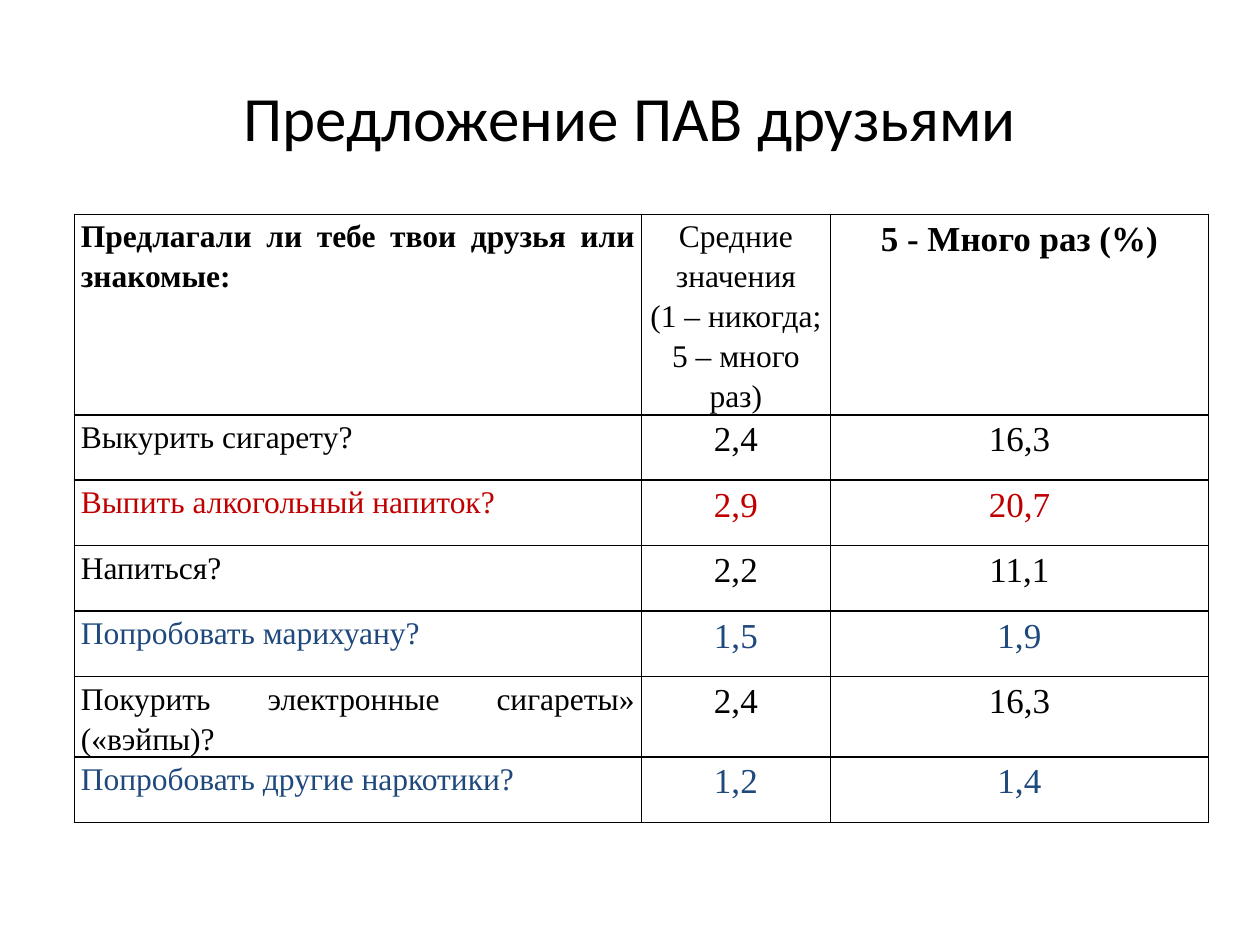
from lxml import etree
from pptx import Presentation
from pptx.dml.color import RGBColor
from pptx.enum.text import MSO_ANCHOR, PP_ALIGN
from pptx.oxml.ns import qn
from pptx.util import Cm, Pt

CENTER, JUSTIFY = PP_ALIGN.CENTER, PP_ALIGN.JUSTIFY
TOP, MIDDLE = MSO_ANCHOR.TOP, MSO_ANCHOR.MIDDLE

BLACK = RGBColor(0x00, 0x00, 0x00)
RED = RGBColor(0xC0, 0x00, 0x00)
BLUE = RGBColor(0x1F, 0x49, 0x7D)

TITLE_FONT, TABLE_FONT = "Calibri", "Times New Roman"
LABEL_SIZE, VALUE_SIZE = 18, 20

COLUMN_WIDTHS = (11.43, 3.81, 7.62)
HEADER_HEIGHT, ROW_HEIGHT = 3.66, 1.32

# Question, mean value, share of "many times", colour
ANSWERS = (
    ("Выкурить сигарету?", "2,4", "16,3", BLACK),
    ("Выпить алкогольный напиток?", "2,9", "20,7", RED),
    ("Напиться?", "2,2", "11,1", BLACK),
    ("Попробовать марихуану?", "1,5", "1,9", BLUE),
    ("Покурить электронные сигареты» («вэйпы)?", "2,4", "16,3", BLACK),
    ("Попробовать другие наркотики?", "1,2", "1,4", BLUE),
)


class SlideBuilder:
    """Holds the style and the current slide."""

    def __init__(self, slide):
        self.slide = slide
        self.line_spacing = 1.15
        self.side_margin = Cm(0.13)
        self.border_width = Pt(1)
        self.border_color = BLACK

    def add_run(self, paragraph, text, font, size, color, bold=False):
        run = paragraph.add_run()
        run.text = text
        run.font.name = font
        run.font.size = Pt(size)
        run.font.bold = bold
        run.font.color.rgb = color

    def title(self, text, left, top, width, height):
        shape = self.slide.shapes.title
        shape.left, shape.top = Cm(left), Cm(top)
        shape.width, shape.height = Cm(width), Cm(height)
        shape.text_frame.vertical_anchor = MIDDLE
        paragraph = shape.text_frame.paragraphs[0]
        paragraph.alignment = CENTER
        self.add_run(paragraph, text, TITLE_FONT, 36, BLACK)

    def table(self, left, top, column_widths, row_heights):
        frame = self.slide.shapes.add_table(
            len(row_heights), len(column_widths), Cm(left), Cm(top),
            Cm(sum(column_widths)), Cm(sum(row_heights)))
        table = frame.table
        table.first_row = table.horz_banding = False
        for column, width in zip(table.columns, column_widths):
            column.width = Cm(width)
        for row, height in zip(table.rows, row_heights):
            row.height = Cm(height)
        return table

    def border(self, cell):
        properties = cell._tc.get_or_add_tcPr()
        for side in ("a:lnL", "a:lnR", "a:lnT", "a:lnB"):
            line = etree.SubElement(properties, qn(side), w=str(self.border_width))
            fill = etree.SubElement(line, qn("a:solidFill"))
            etree.SubElement(fill, qn("a:srgbClr"), val=str(self.border_color))

    def cell(self, cell, lines, alignment, size, color=BLACK, bold=False):
        self.border(cell)
        cell.fill.background()
        cell.margin_left = cell.margin_right = self.side_margin
        cell.margin_top = cell.margin_bottom = 0
        cell.vertical_anchor = TOP
        text_frame = cell.text_frame
        for index, text in enumerate(lines):
            paragraph = text_frame.add_paragraph() if index else text_frame.paragraphs[0]
            paragraph.alignment = alignment
            paragraph.line_spacing = self.line_spacing
            self.add_run(paragraph, text, TABLE_FONT, size, color, bold)


def main():
    presentation = Presentation()
    presentation.slide_width, presentation.slide_height = Cm(25.4), Cm(19.05)
    title_only = presentation.slide_layouts[5]
    builder = SlideBuilder(presentation.slides.add_slide(title_only))

    # Title
    builder.title("Предложение ПАВ друзьями", 1.27, 0.76, 22.86, 3.18)

    # Table header
    row_heights = [HEADER_HEIGHT] + [ROW_HEIGHT] * len(ANSWERS)
    table = builder.table(1.5, 4.32, COLUMN_WIDTHS, row_heights)
    builder.cell(table.cell(0, 0), ["Предлагали ли тебе твои друзья или знакомые:"],
                 JUSTIFY, LABEL_SIZE, bold=True)
    builder.cell(table.cell(0, 1), ["Средние значения", "(1 – никогда; 5 – много раз)"],
                 CENTER, LABEL_SIZE)
    builder.cell(table.cell(0, 2), ["5 - Много раз (%)"], CENTER, VALUE_SIZE, bold=True)

    # Answers
    for row, (question, mean, share, color) in enumerate(ANSWERS, start=1):
        builder.cell(table.cell(row, 0), [question], JUSTIFY, LABEL_SIZE, color)
        for column, value in enumerate((mean, share), start=1):
            builder.cell(table.cell(row, column), [value], CENTER, VALUE_SIZE, color)

    presentation.save("out.pptx")


if __name__ == "__main__":
    main()
